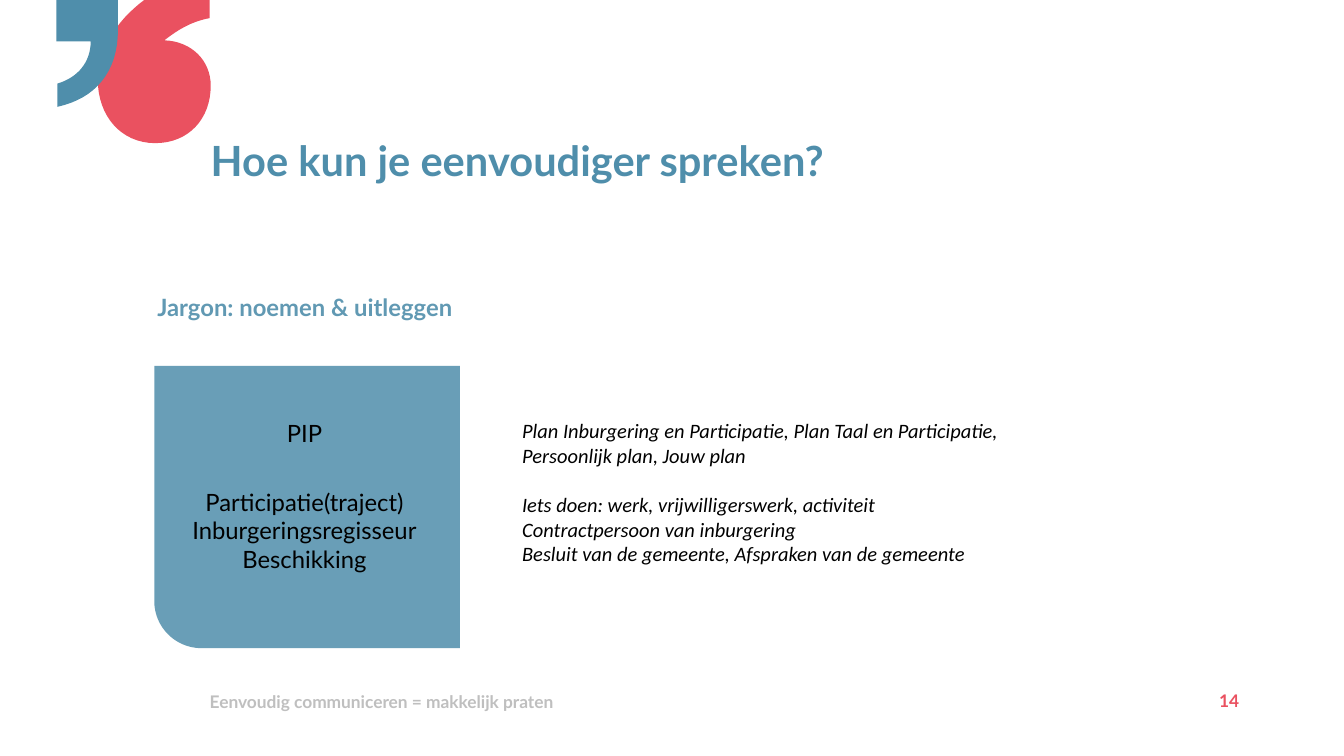
from lxml import etree
from pptx import Presentation
from pptx.dml.color import RGBColor as RGB
from pptx.enum.shapes import MSO_SHAPE as Kind
from pptx.enum.text import MSO_ANCHOR as Anchor, PP_ALIGN as Align
from pptx.oxml.ns import qn
from pptx.util import Pt

SCALE = 9144  # EMU per px, 100 px to the inch
STEPS = 16  # straight pieces per curve
COLORS = {
    "blue": "4F8EAB",
    "soft": "6199B3",
    "red": "EA5160",
    "gray": "BFBFBF",
    "black": "000000",
}


def curve(a, b, c, d):
    """Points of a cubic curve, the start left out."""
    for i in range(1, STEPS + 1):
        t = i / STEPS
        u = 1 - t
        yield tuple(u**3 * p + 3 * u * u * t * q + 3 * u * t * t * r + t**3 * s
                    for p, q, r, s in zip(a, b, c, d))


class Page:
    def __init__(self, deck):
        self.slide = deck.slides.add_slide(deck.slide_layouts[6])
        self.shapes = self.slide.shapes

    def paint(self, shape, color, alpha=None):
        shape.shadow.inherit = False
        shape.fill.solid()
        shape.fill.fore_color.rgb = RGB.from_string(COLORS[color])
        shape.line.fill.background()
        if alpha:
            node = shape.fill._xPr.find(".//" + qn("a:srgbClr"))
            etree.SubElement(node, qn("a:alpha"), val=str(alpha * 1000))

    def outline(self, start, parts, color):
        """A part is one point for a line or three for a curve."""
        dots = [start]
        for part in parts:
            dots += curve(dots[-1], *part) if len(part) == 3 else part
        dots = [(x * SCALE, y * SCALE) for x, y in dots]
        path = self.shapes.build_freeform(*dots[0], scale=1)
        path.add_line_segments(dots[1:], close=True)
        self.paint(path.convert_to_shape(), color)

    def card(self, box, color, alpha, round_):
        shape = self.shapes.add_shape(Kind.ROUND_1_RECTANGLE, *(v * SCALE for v in box))
        shape.adjustments[0] = round_
        shape.rotation = 180
        self.paint(shape, color, alpha)

    def text(self, box, lines, size, color, left=1, top=1, gaps=None,
             align=Align.LEFT, space=1.0, name="Lato", **style):
        """gaps maps a line's index to the points of space before it."""
        frame = self.shapes.add_textbox(*(v * SCALE for v in box)).text_frame
        look = {"word_wrap": True, "vertical_anchor": Anchor.TOP,
                "margin_left": left * SCALE, "margin_top": top * SCALE,
                "margin_right": 0, "margin_bottom": 0}
        for key, value in look.items():
            setattr(frame, key, value)
        font = {"name": name, "size": Pt(size), **style}
        for i, line in enumerate(lines):
            para = frame.add_paragraph() if i else frame.paragraphs[0]
            para.alignment, para.line_spacing = align, space
            if gaps and i in gaps:
                para.space_before = Pt(gaps[i])
            run = para.add_run()
            run.text = line
            for key, value in font.items():
                setattr(run.font, key, value)
            run.font.color.rgb = RGB.from_string(COLORS[color])


def main():
    deck = Presentation()
    deck.slide_width, deck.slide_height = 1333 * SCALE, 750 * SCALE
    page = Page(deck)

    # Quotation marks in the corner
    page.outline((208, 0), [
        [(143, 0)],
        [(115, 21), (97, 50), (97, 79)],
        [(97, 115), (120, 142), (154, 142)],
        [(187, 142), (209, 118), (209, 85)],
        [(209, 60), (190, 41), (163, 40)],
        [(177, 29), (191, 21), (208, 18)],
    ], "red")
    page.outline((117, 0), [
        [(56, 0)], [(56, 41)], [(90, 41)],
        [(90, 62), (77, 77), (57, 83)],
        [(57, 106)],
        [(94, 98), (117, 72), (117, 30)],
    ], "blue")

    # Title and subtitle
    page.text((208, 138, 661, 46), ["Hoe kun je eenvoudiger spreken?"],
              29.7, "blue", space=0.9, bold=True)
    page.text((155, 256, 512, 144), ["Jargon: noemen & uitleggen"],
              17, "soft", top=41, bold=True)

    # Jargon card
    page.card((153, 363, 303, 280), "blue", 85, 0.167)
    page.text((150, 381, 304, 218),
              ["PIP", "Participatie(traject)", "Inburgeringsregisseur", "Beschikking"],
              17, "black", left=0, top=34, gaps={1: 29}, align=Align.CENTER)

    # Explanations
    page.text((508, 381, 638, 210), [
        "Plan Inburgering en Participatie, Plan Taal en Participatie,",
        "Persoonlijk plan, Jouw plan",
        "Iets doen: werk, vrijwilligerswerk, activiteit",
        "Contractpersoon van inburgering",
        "Besluit van de gemeente, Afspraken van de gemeente",
    ], 14.6, "black", left=10, top=34, gaps={2: 17.8}, name="Calibri", italic=True)

    # Footer and page number
    page.text((207, 685, 485, 22), ["Eenvoudig communiceren = makkelijk praten"],
              12.4, "gray", bold=True)
    page.text((921, 684, 308, 22), ["14"], 12.4, "red", align=Align.RIGHT, bold=True)

    deck.save("out.pptx")


if __name__ == "__main__":
    main()
